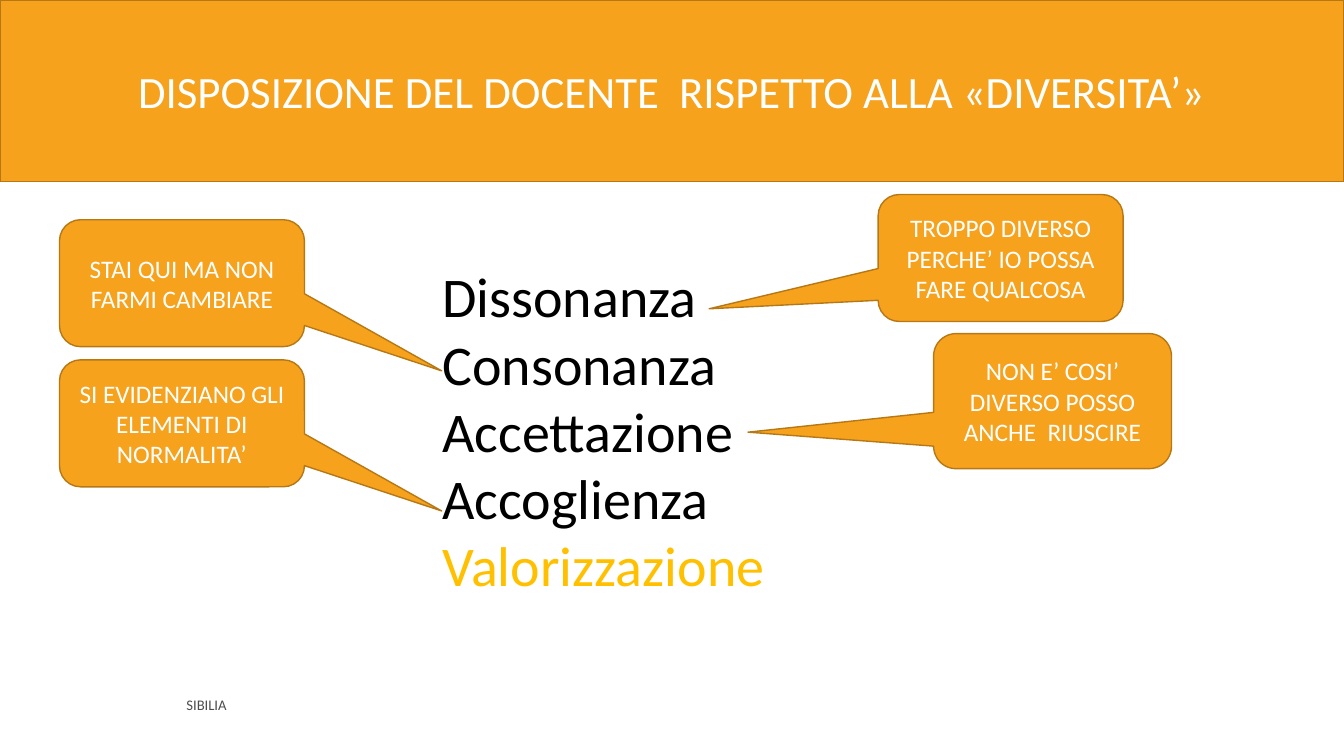
from dataclasses import dataclass

from pptx import Presentation
from pptx.dml.color import RGBColor
from pptx.enum.shapes import MSO_SHAPE
from pptx.enum.text import MSO_ANCHOR, MSO_AUTO_SIZE, PP_ALIGN
from pptx.shapes.base import BaseShape
from pptx.slide import Slide
from pptx.util import Inches, Pt

CALLOUT = MSO_SHAPE.ROUNDED_RECTANGULAR_CALLOUT
MIDDLE = MSO_ANCHOR.MIDDLE
TOP = MSO_ANCHOR.TOP
NO_AUTOFIT = MSO_AUTO_SIZE.NONE
CENTER = PP_ALIGN.CENTER
LEFT = PP_ALIGN.LEFT

ORANGE = RGBColor(0xF6, 0xA2, 0x1D)
BROWN = RGBColor(0xB6, 0x78, 0x15)
GOLD = RGBColor(0xFF, 0xC0, 0x00)
WHITE = RGBColor(0xFF, 0xFF, 0xFF)
BLACK = RGBColor(0x00, 0x00, 0x00)
GREY = RGBColor(0x4D, 0x4D, 0x4D)
FONT = "Calibri"

TITLE = "DISPOSIZIONE DEL DOCENTE  RISPETTO ALLA «DIVERSITA’»"
ATTITUDES = ["Dissonanza", "Consonanza", "Accettazione", "Accoglienza", "Valorizzazione"]


@dataclass(frozen=True)
class Area:
    left: float
    top: float
    width: float
    height: float


@dataclass(frozen=True)
class Callout:
    text: str
    area: Area
    tip_x: float
    tip_y: float


CALLOUTS = [
    Callout("TROPPO DIVERSO PERCHE’ IO POSSA FARE QUALCOSA",
            Area(8.71, 1.93, 2.43, 1.26), -1.19, 0.4),
    Callout("STAI QUI MA NON FARMI CAMBIARE",
            Area(0.59, 2.18, 2.43, 1.26), 1.06, 0.69),
    Callout("NON E’ COSI’ DIVERSO POSSO ANCHE  RIUSCIRE",
            Area(9.26, 3.31, 2.36, 1.34), -1.28, 0.23),
    Callout("SI EVIDENZIANO GLI ELEMENTI DI NORMALITA’",
            Area(0.59, 3.57, 2.43, 1.26), 1.06, 0.69),
]


def bounds(area: Area) -> list[int]:
    return [Inches(value) for value in (area.left, area.top, area.width, area.height)]


def write(box: BaseShape, text: str, size: float, color: RGBColor,
          align: PP_ALIGN, anchor: MSO_ANCHOR) -> None:
    frame = box.text_frame
    frame.text = text
    frame.word_wrap = True
    frame.auto_size = NO_AUTOFIT
    frame.vertical_anchor = anchor
    for para in frame.paragraphs:
        para.alignment = align
        for span in para.runs:
            span.font.name = FONT
            span.font.size = Pt(size)
            span.font.color.rgb = color


def paint(shape: BaseShape) -> None:
    shape.fill.solid()
    shape.fill.fore_color.rgb = ORANGE
    shape.line.color.rgb = BROWN
    shape.line.width = Pt(1)


def add_title(page: Slide) -> None:
    title = page.shapes.title
    title.left, title.top, title.width, title.height = bounds(Area(0, 0, 13.33, 1.8))
    paint(title)
    write(title, TITLE, 32, WHITE, CENTER, MIDDLE)


def add_callout(page: Slide, callout: Callout) -> None:
    shape = page.shapes.add_shape(CALLOUT, *bounds(callout.area))
    shape.shadow.inherit = False
    shape.adjustments[0] = callout.tip_x
    shape.adjustments[1] = callout.tip_y
    paint(shape)
    write(shape, callout.text, 18, WHITE, CENTER, MIDDLE)


def main() -> None:
    deck = Presentation()
    deck.slide_width = Inches(13.33)
    deck.slide_height = Inches(7.5)
    page = deck.slides.add_slide(deck.slide_layouts.get_by_name("Title Only"))

    add_title(page)
    attitudes = page.shapes.add_textbox(*bounds(Area(4.29, 2.55, 7.48, 3.51)))
    write(attitudes, "\n".join(ATTITUDES), 40, BLACK, LEFT, TOP)
    attitudes.text_frame.paragraphs[-1].runs[0].font.color.rgb = GOLD
    for callout in CALLOUTS:
        add_callout(page, callout)
    footer = page.shapes.add_textbox(*bounds(Area(1.75, 6.82, 6.45, 0.35)))
    write(footer, "SIBILIA", 10.5, GREY, LEFT, MIDDLE)

    deck.save("out.pptx")


if __name__ == "__main__":
    main()
